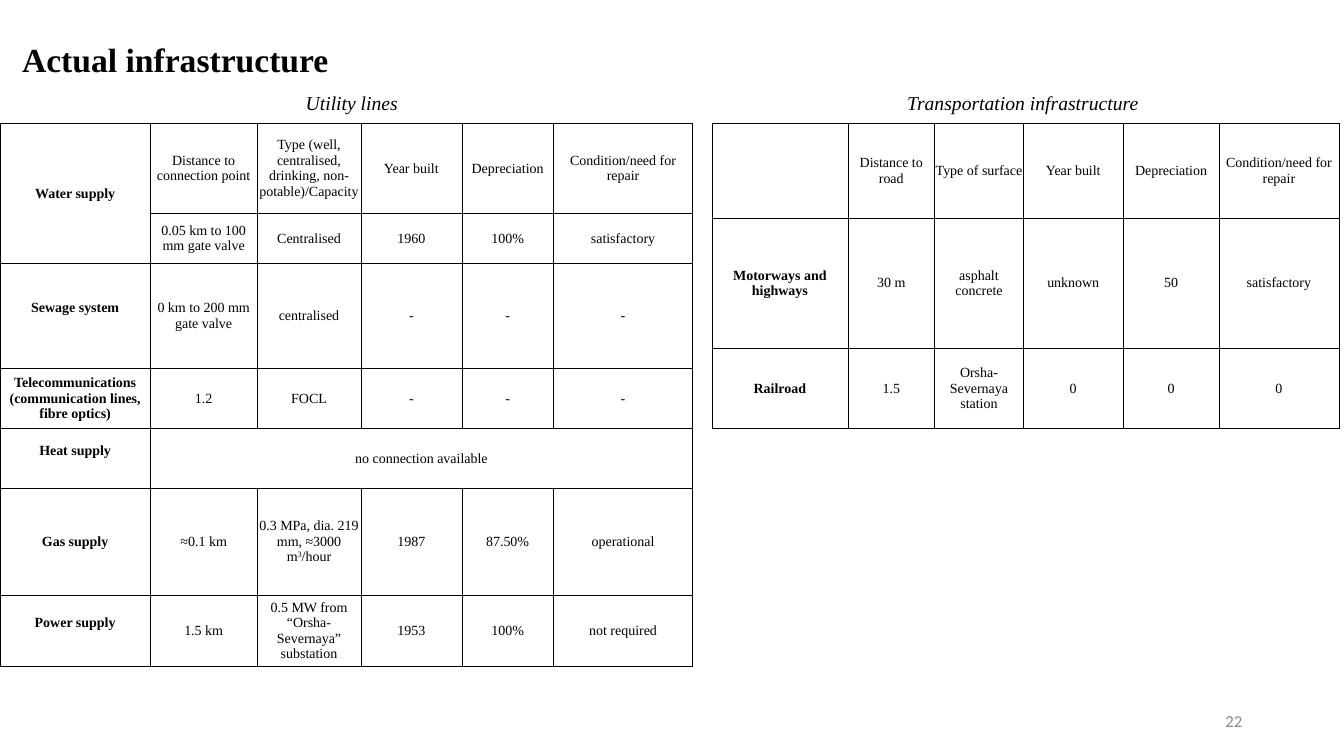
from dataclasses import dataclass

from lxml.etree import SubElement
from pptx import Presentation
from pptx.dml.color import RGBColor
from pptx.enum.text import MSO_ANCHOR as Anchor, PP_ALIGN as Align
from pptx.oxml.ns import qn
from pptx.slide import Slide
from pptx.table import _Cell as Cell
from pptx.text.text import TextFrame
from pptx.util import Inches, Pt

SERIF = "Times New Roman"
BLACK = "000000"
WHITE = "FFFFFF"
GREY = "8C8C8C"
BORDER_POINTS = 0.25
CELL_MARGIN = 0.01
RAISED_MARGIN = 0.16


@dataclass(frozen=True)
class Box:
    left: float
    top: float
    width: float
    height: float


@dataclass(frozen=True)
class Heading:
    text: str
    box: Box


@dataclass(frozen=True)
class Grid:
    left: float
    top: float
    columns: tuple[float, ...]
    rows: tuple[float, ...]
    texts: tuple[tuple[str, ...], ...]
    merges: tuple[tuple[int, int, int, int], ...] = ()
    raised_labels: tuple[str, ...] = ()


HEADINGS = (
    Heading("Utility lines", Box(0.19, 0.88, 6.6, 6.4)),
    Heading("Transportation infrastructure", Box(6.94, 0.88, 6.41, 2.58)),
)

SHARED_HEADERS = ("Year built", "Depreciation", "Condition/need for repair")

TRANSPORT = Grid(
    left=7.06,
    top=1.22,
    columns=(1.35, 0.86, 0.88, 0.99, 0.95, 1.19),
    rows=(0.94, 1.29, 0.8),
    texts=(
        ("", "Distance to road", "Type of surface", *SHARED_HEADERS),
        ("Motorways and highways", "30 m", "asphalt concrete", "unknown", "50", "satisfactory"),
        ("Railroad", "1.5", "Orsha-Severnaya station", "0", "0", "0"),
    ),
)

UTILITIES = Grid(
    left=0,
    top=1.22,
    columns=(1.49, 1.06, 1.03, 1, 0.91, 1.38),
    rows=(0.89, 0.5, 1.04, 0.6, 0.59, 1.06, 0.71),
    texts=(
        ("Water supply", "Distance to connection point",
         "Type (well, centralised, drinking, non-potable)/Capacity", *SHARED_HEADERS),
        ("", "0.05 km to 100 mm gate valve", "Centralised", "1960", "100%", "satisfactory"),
        ("Sewage system", "0 km to 200 mm gate valve", "centralised", "-", "-", "-"),
        ("Telecommunications (communication lines, fibre optics)", "1.2", "FOCL", "-", "-", "-"),
        ("Heat supply", "no connection available", "", "", "", ""),
        ("Gas supply", "≈0.1 km", "0.3 MPa, dia. 219 mm, ≈3000 m^3^/hour",
         "1987", "87.50%", "operational"),
        ("Power supply", "1.5 km", "0.5 MW from “Orsha-Severnaya” substation",
         "1953", "100%", "not required"),
    ),
    merges=((0, 0, 1, 0), (4, 1, 4, 5)),
    raised_labels=("Sewage system", "Heat supply", "Power supply"),
)


def color(value: str) -> RGBColor:
    return RGBColor.from_string(value)


def write_text(frame: TextFrame, text: str, *, size: float, font: str = SERIF,
               ink: str = BLACK, bold: bool = False, italic: bool = False,
               align: Align = Align.CENTER, line_spacing: float = 1.0,
               space_before: float = 0) -> None:
    frame.word_wrap = True
    paragraph = frame.paragraphs[0]
    paragraph.alignment = align
    paragraph.line_spacing = line_spacing
    paragraph.space_before = Pt(space_before)
    for index, piece in enumerate(text.split("^")):
        run = paragraph.add_run()
        run.text = piece
        run.font.size = Pt(size)
        run.font.name = font
        run.font.bold = bold
        run.font.italic = italic
        run.font.color.rgb = color(ink)
        if index % 2:
            run._r.get_or_add_rPr().set("baseline", "30000")


def add_text(slide: Slide, box: Box, text: str, *, anchor: Anchor = Anchor.MIDDLE,
             outline: str | None = None, **text_format) -> None:
    shape = slide.shapes.add_textbox(
        Inches(box.left), Inches(box.top), Inches(box.width), Inches(box.height))
    shape.text_frame.vertical_anchor = anchor
    if outline:
        shape.line.color.rgb = color(outline)
        shape.line.width = Pt(0.75)
    write_text(shape.text_frame, text, **text_format)


def style_cell(cell: Cell, bottom_margin: float) -> None:
    properties = cell._tc.get_or_add_tcPr()
    for side in ("a:lnL", "a:lnR", "a:lnT", "a:lnB"):
        border = SubElement(properties, qn(side), w=str(Pt(BORDER_POINTS)))
        fill = SubElement(border, qn("a:solidFill"))
        SubElement(fill, qn("a:srgbClr"), val=BLACK)
    cell.fill.background()
    cell.vertical_anchor = Anchor.MIDDLE
    cell.margin_left = cell.margin_right = cell.margin_top = Inches(CELL_MARGIN)
    cell.margin_bottom = Inches(bottom_margin)


def add_grid(slide: Slide, grid: Grid) -> None:
    table = slide.shapes.add_table(
        len(grid.rows), len(grid.columns), Inches(grid.left), Inches(grid.top),
        Inches(sum(grid.columns)), Inches(sum(grid.rows))).table
    table.first_row = False
    table.horz_banding = False
    for column, width in zip(table.columns, grid.columns):
        column.width = Inches(width)
    for row, height in zip(table.rows, grid.rows):
        row.height = Inches(height)
    for row_index, texts in enumerate(grid.texts):
        for column_index, text in enumerate(texts):
            cell = table.cell(row_index, column_index)
            style_cell(cell, RAISED_MARGIN if text in grid.raised_labels else 0)
            if text:
                write_text(cell.text_frame, text, size=10, bold=column_index == 0)
    for top, left, bottom, right in grid.merges:
        table.cell(top, left).merge(table.cell(bottom, right))


def main() -> None:
    presentation = Presentation()
    presentation.slide_width = Inches(13.33)
    presentation.slide_height = Inches(7.5)
    slide = presentation.slides.add_slide(presentation.slide_layouts[6])

    add_text(slide, Box(0.12, 0.19, 5.35, 0.84), "Actual infrastructure",
             size=24, bold=True, align=Align.LEFT, line_spacing=0.9)
    for heading in HEADINGS:
        add_text(slide, heading.box, heading.text, anchor=Anchor.TOP, outline=WHITE,
                 size=14, italic=True, line_spacing=0.9, space_before=10)
    for grid in (TRANSPORT, UTILITIES):
        add_grid(slide, grid)
    add_text(slide, Box(9.42, 6.95, 3, 0.4), "22",
             size=12, font="Calibri", ink=GREY, align=Align.RIGHT)

    presentation.save("out.pptx")


if __name__ == "__main__":
    main()
